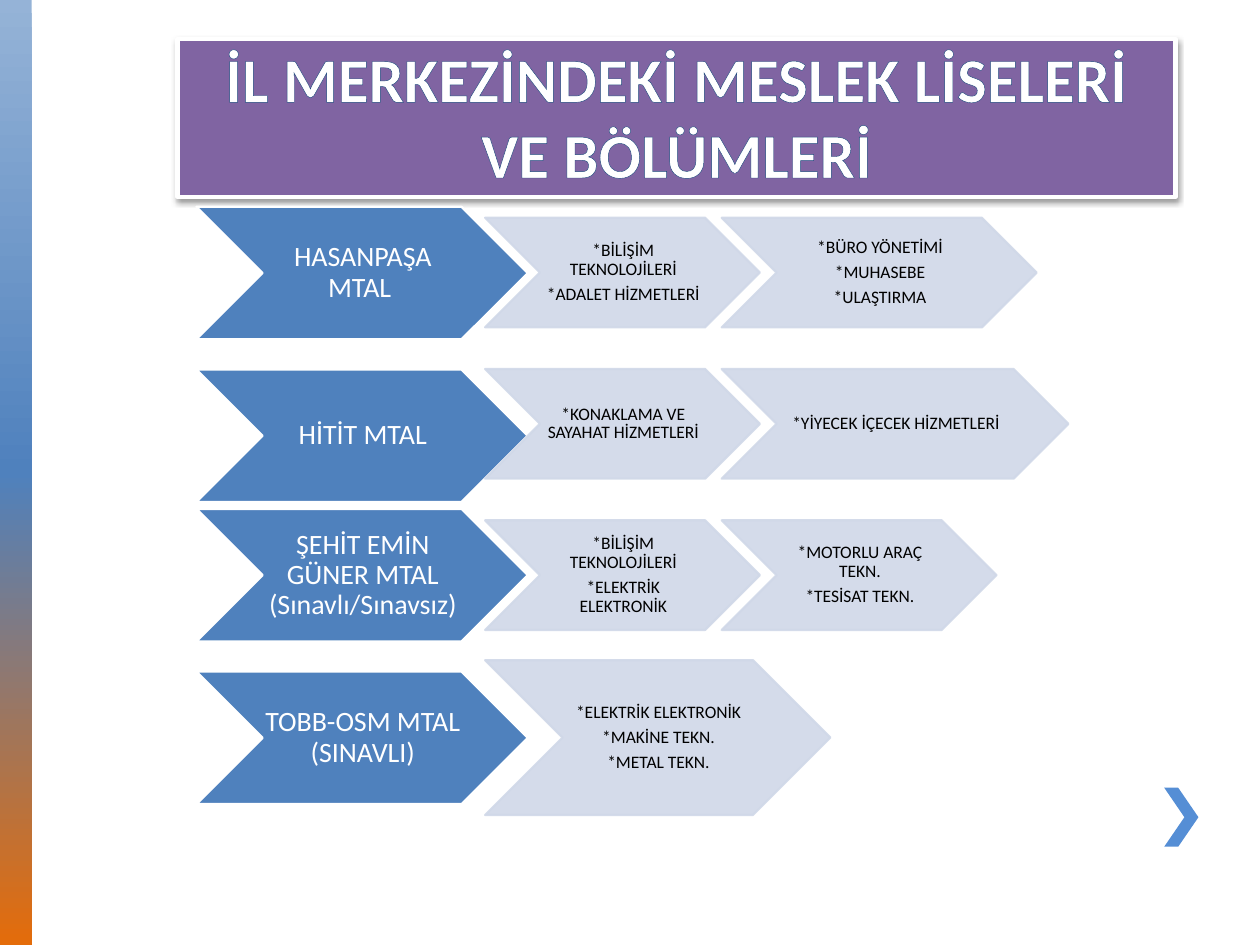
from lxml import etree
from pptx import Presentation
from pptx import util as u
from pptx.dml.color import RGBColor
from pptx.enum import shapes, text
from pptx.oxml import parse_xml
from pptx.oxml.ns import nsdecls, qn

FONT = "Calibri"
WHITE, BLACK = "FFFFFF", "000000"
BLUE, PALE, PURPLE, NAVY = "4F81BD", "D0D8E8", "8064A2", "1F497D"

# Chevron grid, in centimetres
SCHOOL_LEFT, SCHOOL_WIDTH, SCHOOL_HEIGHT = 3.96, 6.68, 2.67
FIELD_LEFT, FIELD_OVERLAP = 9.78, 0.77

# School, its top, top and height of its fields, then (width, lines) of each field
ROWS = [
    ("HASANPAŞA MTAL ", 4.17, 4.39, 2.21, [
        (5.54, ["*BİLİŞİM TEKNOLOJİLERİ", "*ADALET HİZMETLERİ"]),
        (6.35, ["*BÜRO YÖNETİMİ", "*MUHASEBE", "*ULAŞTIRMA"])]),
    ("HİTİT MTAL", 7.45, 7.44, 2.21, [
        (5.54, ["*KONAKLAMA VE SAYAHAT HİZMETLERİ"]),
        (6.99, ["*YİYECEK İÇECEK HİZMETLERİ"])]),
    ("ŞEHİT EMİN GÜNER MTAL (Sınavlı/Sınavsız)", 10.26, 10.49, 2.21, [
        (5.54, ["*BİLİŞİM TEKNOLOJİLERİ", "*ELEKTRİK ELEKTRONİK"]),
        (5.54, ["*MOTORLU ARAÇ TEKN.", "*TESİSAT TEKN."])]),
    ("TOBB-OSM MTAL (SINAVLI)", 13.54, 13.31, 3.12, [
        (6.96, ["*ELEKTRİK ELEKTRONİK", "*MAKİNE TEKN.", "*METAL TEKN."])]),
]


def color(value):
    return RGBColor.from_string(value)


def paint(shape, fill, line=None, width=1.25):
    shape.fill.solid()
    shape.fill.fore_color.rgb = color(fill)
    if line:
        shape.line.color.rgb = color(line)
        shape.line.width = u.Pt(width)
    else:
        shape.line.fill.background()


def add_shape(page, kind, left, top, width, height):
    shape = page.shapes.add_shape(kind, u.Cm(left), u.Cm(top), u.Cm(width), u.Cm(height))
    shape.shadow.inherit = False
    return shape


def format_span(span, size, ink):
    span.font.name = FONT
    span.font.size = u.Pt(size)
    span.font.color.rgb = color(ink)


def add_side_bar(page):
    bar = add_shape(page, shapes.MSO_SHAPE.RECTANGLE, 0, 0, 0.64, 19.05)
    bar.line.fill.background()
    bar.fill.gradient()
    bar.fill.gradient_angle = 270
    stops = bar.element.spPr.find(qn("a:gradFill")).find(qn("a:gsLst"))
    for stop in list(stops):
        stops.remove(stop)
    for percent, tone in [(0, "95B3D7"), (50, BLUE), (100, "E46C0A")]:
        stop = etree.SubElement(stops, qn("a:gs"), pos=str(percent * 1000))
        etree.SubElement(stop, qn("a:srgbClr"), val=tone)


def add_title(page, words):
    title = page.shapes.title
    title.left, title.top = u.Cm(3.58), u.Cm(0.79)
    title.width, title.height = u.Cm(20.12), u.Cm(3.18)
    paint(title, PURPLE, WHITE, 2.5)
    title.element.spPr.append(parse_xml(
        f'<a:effectLst {nsdecls("a")}><a:outerShdw blurRad="{u.Pt(3.1)}" dist="{u.Pt(1.6)}" '
        f'dir="5400000" rotWithShape="0"><a:srgbClr val="{BLACK}"><a:alpha val="38000"/>'
        '</a:srgbClr></a:outerShdw></a:effectLst>'))
    frame = title.text_frame
    frame.text = words
    frame.word_wrap = True
    frame.auto_size = text.MSO_AUTO_SIZE.NONE
    frame.vertical_anchor = text.MSO_ANCHOR.BOTTOM
    para = frame.paragraphs[0]
    para.alignment = text.PP_ALIGN.CENTER
    span = para.runs[0]
    format_span(span, 36, WHITE)
    span.font.bold = True
    # Thin outline around the letters
    span.font._element.insert(0, parse_xml(
        f'<a:ln {nsdecls("a")} w="{u.Pt(1)}"><a:solidFill><a:srgbClr val="{NAVY}"/>'
        '</a:solidFill></a:ln>'))


def add_chevron(page, box, lines, size, ink, fill, line):
    chevron = add_shape(page, shapes.MSO_SHAPE.CHEVRON, *box)
    paint(chevron, fill, line)
    frame = chevron.text_frame
    frame.text = "\n".join(lines)
    frame.word_wrap = True
    frame.vertical_anchor = text.MSO_ANCHOR.MIDDLE
    frame.margin_left = frame.margin_top = frame.margin_bottom = u.Cm(0.03)
    frame.margin_right = 0
    for para in frame.paragraphs:
        para.alignment = text.PP_ALIGN.CENTER
        para.line_spacing = 0.9
        para.space_after = u.Pt(size * 0.35)
        format_span(para.runs[0], size, ink)
    return chevron


def add_row(page, school, top, field_top, field_height, fields):
    add_chevron(page, (SCHOOL_LEFT, top, SCHOOL_WIDTH, SCHOOL_HEIGHT),
                [school], 16, WHITE, BLUE, WHITE)
    left = FIELD_LEFT
    for width, lines in fields:
        field = add_chevron(page, (left, field_top, width, field_height),
                            lines, 10, BLACK, PALE, PALE)
        # Slightly transparent fill and line
        for tone in field.element.spPr.iter(qn("a:srgbClr")):
            etree.SubElement(tone, qn("a:alpha"), val="90000")
        left += width - FIELD_OVERLAP


def add_corner_arrow(page):
    arrow = add_shape(page, shapes.MSO_SHAPE.CHEVRON, 23.47, 15.88, 0.69, 1.19)
    arrow.adjustments[0] = 0.59
    paint(arrow, "558ED5")


def main():
    deck = Presentation()
    deck.slide_width, deck.slide_height = u.Cm(25.4), u.Cm(19.05)
    page = deck.slides.add_slide(deck.slide_layouts[5])
    add_side_bar(page)
    add_corner_arrow(page)
    add_title(page, "İL MERKEZİNDEKİ MESLEK LİSELERİ VE BÖLÜMLERİ")
    for row in ROWS:
        add_row(page, *row)
    deck.save("out.pptx")


if __name__ == "__main__":
    main()
